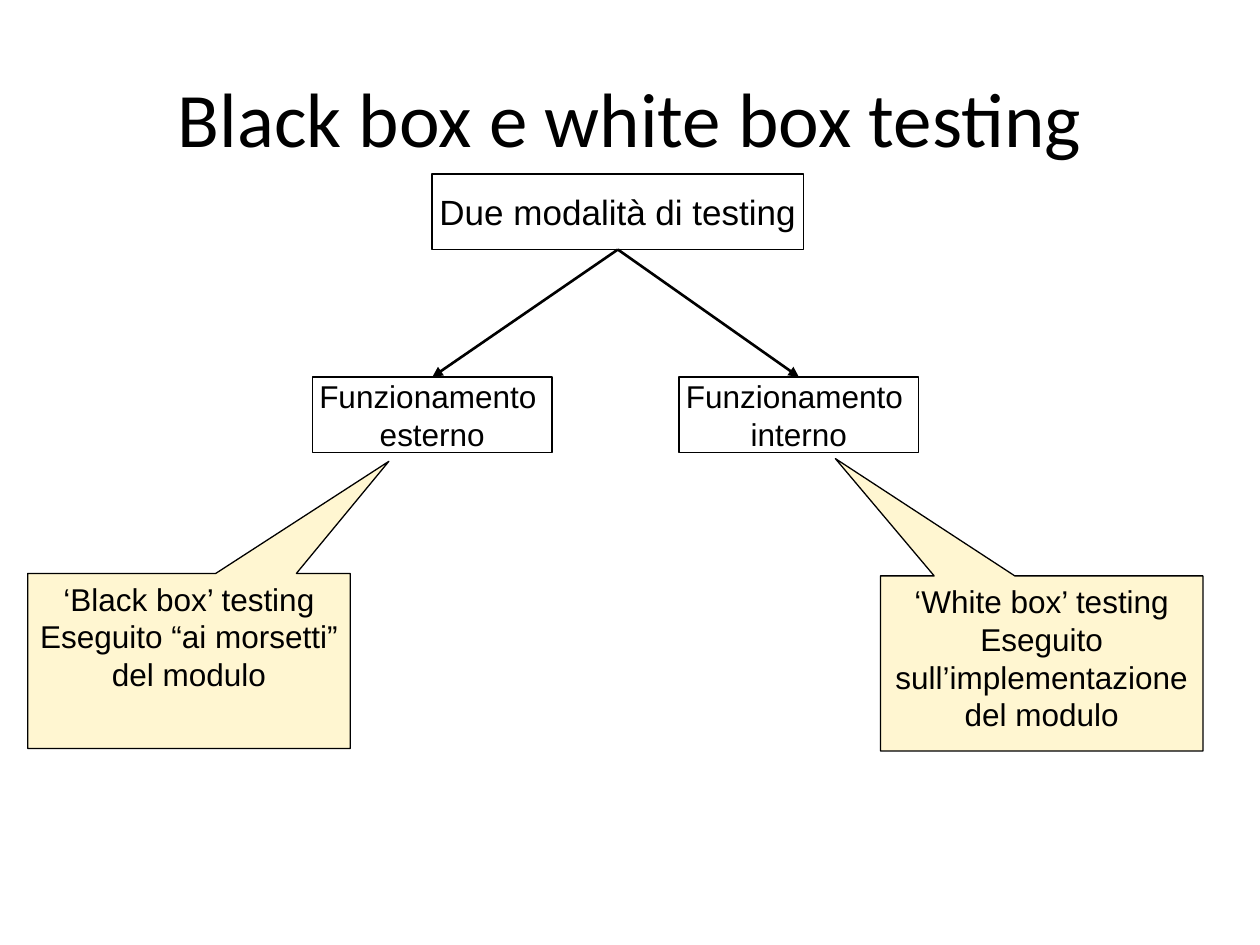
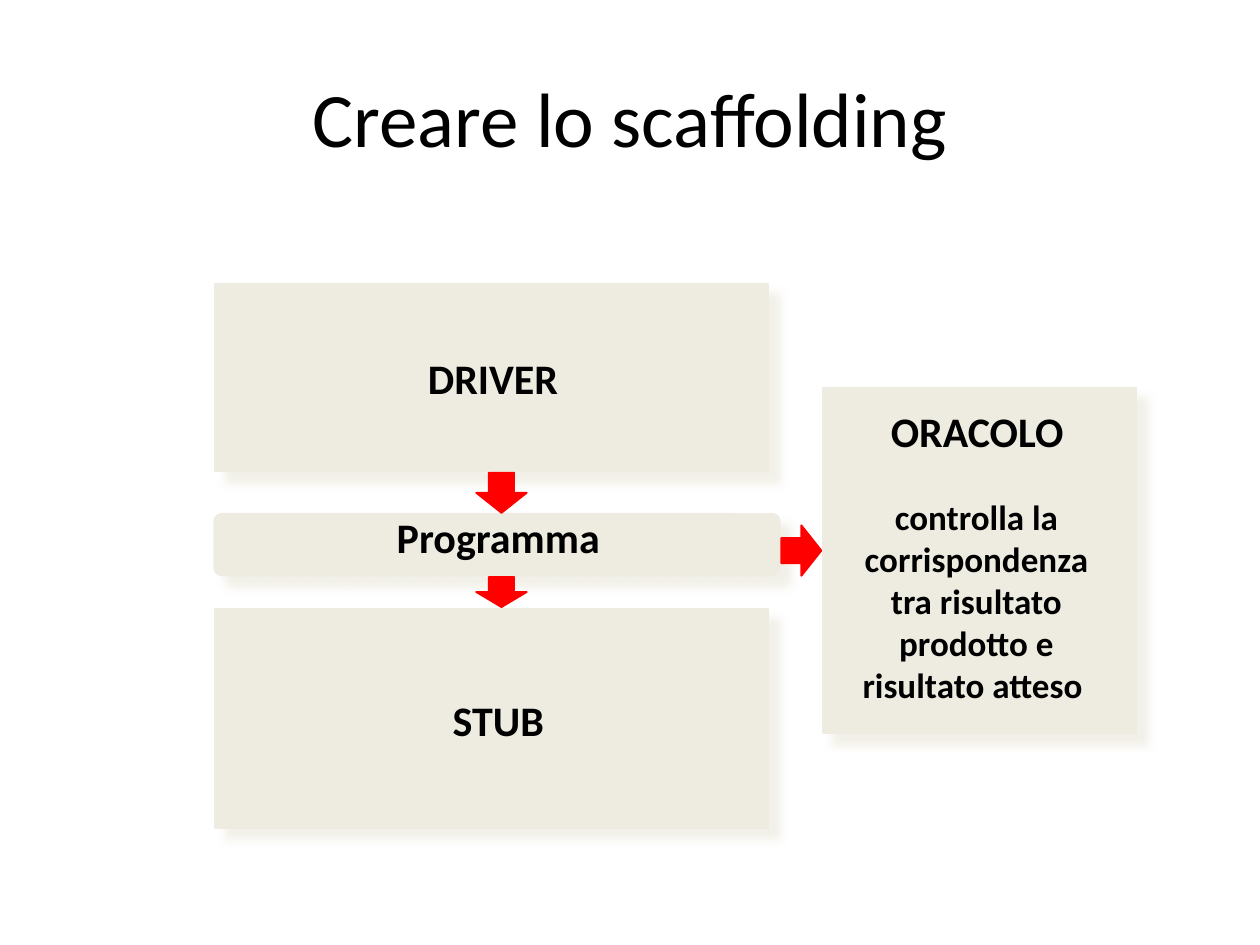
"""Build two slides on software testing: testing modes and scaffolding."""
import pptx
import pptx.dml.color
import pptx.enum.shapes
import pptx.enum.text
import pptx.oxml
import pptx.oxml.ns
import pptx.util

Cm = pptx.util.Cm
Pt = pptx.util.Pt
Shape = pptx.enum.shapes.MSO_SHAPE
Anchor = pptx.enum.text.MSO_ANCHOR
INK, PAPER, CREAM, SAND, RED = "000000", "FFFFFF", "FFF6D1", "EEECE1", "FF0000"


def colour(code):
    return pptx.dml.color.RGBColor.from_string(code)


def add_xml(parent, tag, inner="", **attributes):
    listed = " ".join(f'{name}="{value}"' for name, value in attributes.items())
    namespace = pptx.oxml.ns.nsdecls("a")
    parent.append(pptx.oxml.parse_xml(f"<a:{tag} {namespace} {listed}>{inner}</a:{tag}>"))


def set_format(target, values):
    for name, value in values.items():
        setattr(target, name, value)


class Painter:
    """Hold the style and the current page, and draw each kind of element."""

    title_font = {"name": "Calibri", "size": Pt(44)}
    caption_font = {"name": "Calibri", "size": Pt(24), "bold": True}
    detail_font = {**caption_font, "size": Pt(20)}
    root_font = {"name": "Arial", "size": Pt(20)}
    node_font = {"name": "Arial", "size": Pt(18)}

    def __init__(self):
        self.deck = pptx.Presentation()
        set_format(self.deck, {"slide_width": Cm(25.4), "slide_height": Cm(19.05)})
        self.page = None

    def new_page(self, title):
        self.page = self.deck.slides.add_slide(self.deck.slide_layouts[6])
        self.text((1.27, 0.76, 22.86, 3.18), [title], self.title_font, anchor=Anchor.MIDDLE)

    def put_lines(self, box, lines, font, wrap=True, anchor=Anchor.TOP):
        frame = box.text_frame
        set_format(frame, {"word_wrap": wrap, "vertical_anchor": anchor})
        for index, line in enumerate(lines):
            para = frame.add_paragraph() if index else frame.paragraphs[0]
            para.text = line
            para.alignment = pptx.enum.text.PP_ALIGN.CENTER
            for span in para.runs:
                set_format(span.font, font)
                span.font.color.rgb = colour(INK)

    def text(self, place, lines, font, **layout):
        box = self.page.shapes.add_textbox(*map(Cm, place))
        self.put_lines(box, lines, font, **layout)

    def shape(self, kind, place, fill, line, width, adjust=()):
        box = self.page.shapes.add_shape(kind, *map(Cm, place))
        box.shadow.inherit = False
        box.fill.solid()
        box.fill.fore_color.rgb = colour(fill)
        box.line.color.rgb = colour(line)
        box.line.width = Pt(width)
        for index, value in enumerate(adjust):
            box.adjustments[index] = value
        return box

    def node(self, place, label, font):
        box = self.shape(Shape.RECTANGLE, place, PAPER, INK, 0.75)
        self.put_lines(box, [label], font, wrap=False, anchor=Anchor.MIDDLE)
        return box

    def callout(self, left, top, tip, lines):
        box = self.shape(Shape.RECTANGULAR_CALLOUT, (left, top, 6.5, 3.53), CREAM, INK, 0.75, tip)
        set_format(box.text_frame, {"margin_left": Cm(0.2), "margin_right": Cm(0.2)})
        self.put_lines(box, lines, self.node_font)

    def link(self, parent, child):
        arrow = self.page.shapes.add_connector(pptx.enum.shapes.MSO_CONNECTOR.STRAIGHT, 0, 0, 0, 0)
        arrow.begin_connect(parent, 2)
        arrow.end_connect(child, 0)
        arrow.line.color.rgb = colour(INK)
        arrow.line.width = Pt(1.5)
        properties = arrow._element.spPr
        add_xml(properties.find(pptx.oxml.ns.qn("a:ln")), "tailEnd", type="triangle")
        add_xml(properties, "effectLst")

    def panel(self, place, kind=Shape.RECTANGLE, adjust=()):
        box = self.shape(kind, place, SAND, SAND, 1, adjust)
        effects = box._element.spPr.find(pptx.oxml.ns.qn("a:effectLst"))
        tint = f'<a:srgbClr val="{SAND}"><a:alpha val="75000"/></a:srgbClr>'
        add_xml(effects, "outerShdw", tint, blurRad=Pt(5), dist=Pt(8.5), dir=45 * 60000,
                algn="tl", rotWithShape=0)

    def block_arrow(self, kind, place):
        self.shape(kind, place, RED, RED, 1)


def draw_testing_modes(painter):
    painter.new_page("Black box e white box testing")
    root = painter.node((8.71, 3.51, 7.49, 1.52), "Due modalità di testing", painter.root_font)
    nodes = [painter.node((left, 7.6, 4.83, 1.52), f"Funzionamento \v{mode}", painter.node_font)
             for left, mode in ((6.3, "esterno"), (13.69, "interno"))]
    painter.callout(0.56, 11.56, (0.62, -1.14),
                    ["‘Black box’ testing", "Eseguito “ai morsetti” del modulo"])
    painter.callout(17.75, 11.61, (-0.64, -1.17),
                    ["‘White box’ testing", "Eseguito sull’implementazione del modulo"])
    for node in nodes:
        painter.link(root, node)


def draw_scaffolding(painter):
    painter.new_page("Creare lo scaffolding")
    painter.panel((4.34, 5.72, 11.15, 3.78))
    painter.panel((4.34, 12.27, 11.15, 4.42))
    painter.panel((4.32, 10.36, 11.4, 1.24), Shape.ROUNDED_RECTANGLE, (0.12,))
    painter.block_arrow(Shape.DOWN_ARROW, (9.6, 9.53, 1.02, 0.81))
    painter.block_arrow(Shape.DOWN_ARROW, (9.6, 11.63, 1.02, 0.61))
    painter.block_arrow(Shape.RIGHT_ARROW, (15.75, 10.59, 0.81, 1.02))
    painter.panel((16.59, 7.82, 6.32, 6.96))
    captions = {
        "DRIVER": (6.32, 6.99, 7.24, 1.27),
        "Programma": (7.72, 10.19, 4.65, 1.27),
        "STUB": (6.12, 13.87, 7.85, 1.3),
        "ORACOLO": (17.68, 8.05, 4.04, 1.27),
    }
    for caption, place in captions.items():
        painter.text(place, [caption], painter.caption_font, wrap=False)
    painter.text((16.89, 9.86, 5.59, 4.52),
                 ["controlla la corrispondenza tra risultato prodotto e risultato atteso "],
                 painter.detail_font)


def main():
    painter = Painter()
    draw_testing_modes(painter)
    draw_scaffolding(painter)
    painter.deck.save("out.pptx")


if __name__ == "__main__":
    main()
